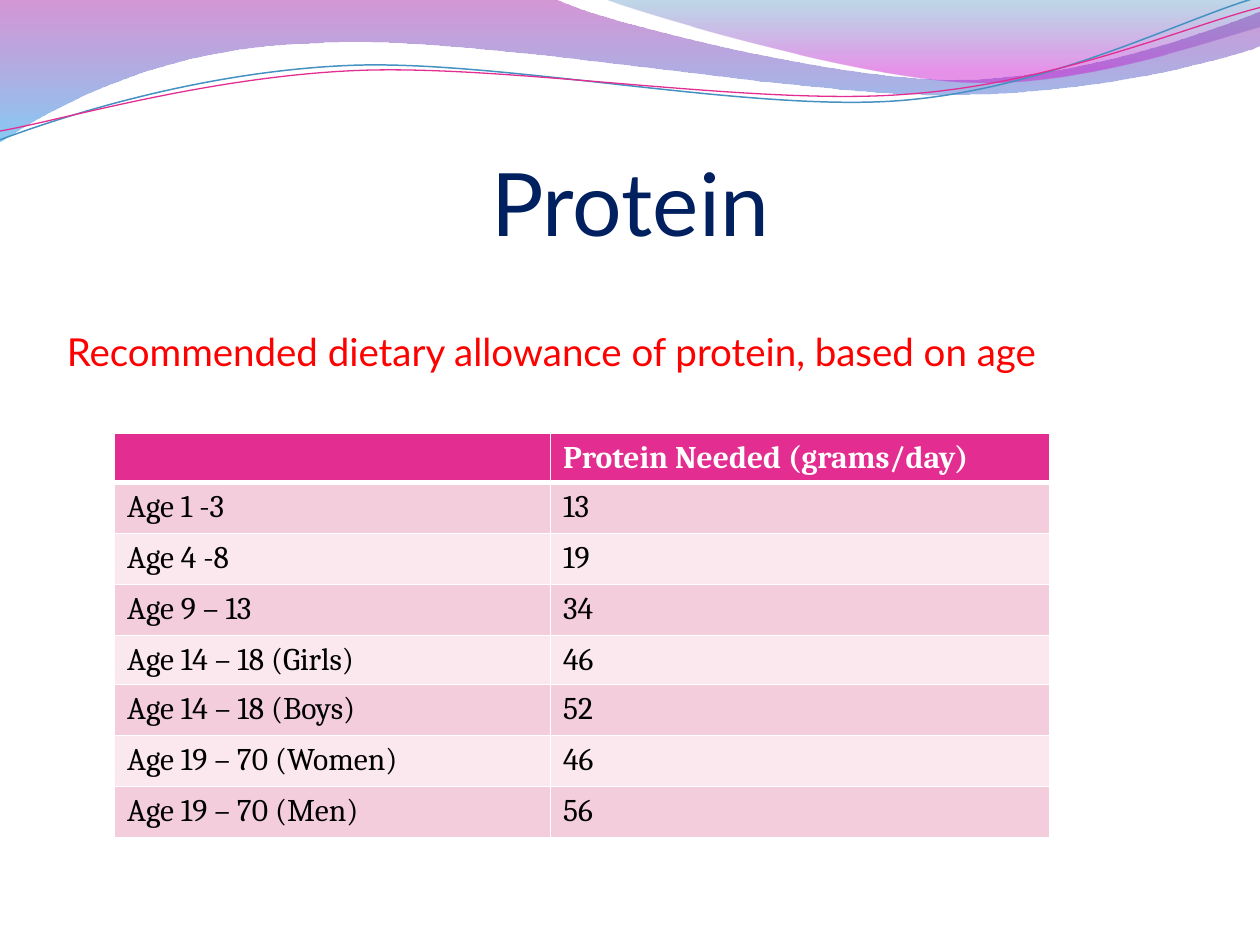
from dataclasses import dataclass

from lxml.etree import SubElement
from pptx import Presentation
from pptx.dml.color import RGBColor
from pptx.enum.text import MSO_ANCHOR, PP_ALIGN
from pptx.oxml.ns import qn
from pptx.util import Inches, Pt

Point = tuple[float, float]


@dataclass(frozen=True)
class Theme:
    navy: str = "002060"
    red: str = "FF0000"
    pink: str = "E32D91"
    blue: str = "4592C2"
    white: str = "FFFFFF"
    black: str = "000000"
    bands: tuple[str, str] = ("F4CDDC", "FAE8EE")
    sans: str = "Lato"
    serif: str = "Cambria"
    title: int = 50
    lead: int = 22
    cell: int = 18


@dataclass(frozen=True)
class Stop:
    place: float
    color: str
    alpha: int


@dataclass(frozen=True)
class Wave:
    """A start point and steps: one point is a line, three are a Bezier curve."""
    start: Point
    steps: list[list[Point]]
    stops: tuple[Stop, ...] = ()
    color: str = ""
    width: float = 0


THEME = Theme()

WAVES = [
    Wave((0, 0), [
        [(4.4, -0.01)],
        [(4.76, 0.17), (6.64, 0.63), (7.58, 0.63)],
        [(8.53, 0.63), (9.58, 0.26), (10, 0.09)],
        [(10.01, 0.36)],
        [(9.83, 0.44), (8.7, 0.76), (7.46, 0.75)],
        [(6.22, 0.75), (3.82, 0.28), (2.57, 0.34)],
        [(1.29, 0.36), (0.46, 0.83), (-0.01, 1.13)],
        [(0, 0)],
    ], stops=(Stop(0, "9F18A2", 45), Stop(1, "239FEB", 55))),
    Wave((4.79, -0.01), [
        [(5.09, 0.11), (6.82, 0.62), (7.69, 0.65)],
        [(8.56, 0.69), (9.61, 0.32), (10, 0.21)],
        [(10, 0)],
        [(4.79, -0.01)],
    ], stops=(Stop(0, "2A7FB3", 30), Stop(0.8, "CB0FD0", 45))),
    Wave((0, 1.11), [
        [(0.48, 0.93), (1.58, 0.57), (2.77, 0.52)],
        [(3.95, 0.47), (5.93, 0.89), (7.13, 0.8)],
        [(8.33, 0.71), (9.38, 0.15), (9.98, -0.02)],
    ], color=THEME.blue, width=0.85),
    Wave((0, 1.04), [
        [(0.47, 0.96), (1.64, 0.61), (2.83, 0.56)],
        [(4.03, 0.51), (5.97, 0.84), (7.17, 0.75)],
        [(8.36, 0.67), (9.41, 0.21), (10, 0.06)],
    ], color=THEME.pink, width=0.75),
]

ROWS = [
    ("", "Protein Needed (grams/day)"),
    ("Age 1 -3", "13"),
    ("Age 4 -8", "19"),
    ("Age 9 – 13", "34"),
    ("Age 14 – 18 (Girls)", "46"),
    ("Age 14 – 18 (Boys)", "52"),
    ("Age 19 – 70 (Women)", "46"),
    ("Age 19 – 70 (Men)", "56"),
]
WIDTHS = (3.46, 3.96)
LOW, TALL = 0.38, 2.43 / 6
HEIGHTS = (LOW, TALL, TALL, TALL, LOW, TALL, TALL, TALL)


def write(frame, text: str, *, size: int, font: str, color: str,
          bold: bool = False, align=PP_ALIGN.LEFT, before: float = 0):
    para = frame.paragraphs[0]
    para.alignment = align
    para.space_before = Pt(before)
    if not text:
        end = SubElement(para._p, qn("a:endParaRPr"), sz=str(size * 100))
        SubElement(end, qn("a:latin"), typeface=font)
        return para
    run = para.add_run()
    run.text = text
    run.font.size = Pt(size)
    run.font.name = font
    run.font.bold = bold
    run.font.color.rgb = RGBColor.from_string(color)
    return para


def place(shape, left: float, top: float, width: float, height: float) -> None:
    shape.left, shape.top = Inches(left), Inches(top)
    shape.width, shape.height = Inches(width), Inches(height)


def bend(shape, steps: list[list[Point]]) -> None:
    """Join the line segments of each three-point step into one Bezier curve."""
    lines = iter(shape.element.xpath(".//a:lnTo"))
    for step in steps:
        group = [next(lines) for _ in step]
        if len(group) == 3:
            head, *others = group
            for line in others:
                head.append(line[0])
                line.getparent().remove(line)
            head.tag = qn("a:cubicBezTo")


def draw_wave(slide, wave: Wave) -> None:
    pen = slide.shapes.build_freeform(*map(Inches, wave.start))
    points = [(Inches(x), Inches(y)) for step in wave.steps for x, y in step]
    pen.add_line_segments(points, close=bool(wave.stops))
    shape = pen.convert_to_shape()
    bend(shape, wave.steps)
    shape.shadow.inherit = False
    if not wave.stops:
        shape.fill.background()
        shape.line.color.rgb = RGBColor.from_string(wave.color)
        shape.line.width = Pt(wave.width)
        return
    shape.line.fill.background()
    shape.fill.gradient()
    shape.fill.gradient_angle = 270
    for mark, stop in zip(shape.fill.gradient_stops, wave.stops):
        mark.position = stop.place
        mark.color.rgb = RGBColor.from_string(stop.color)
    for node, stop in zip(shape.element.xpath(".//a:gs/a:srgbClr"), wave.stops):
        SubElement(node, qn("a:alpha"), val=str(stop.alpha * 1000))


def edge(cell, side: str, width: float) -> None:
    line = SubElement(cell._tc.get_or_add_tcPr(), qn(f"a:ln{side}"), w=str(Pt(width)))
    fill = SubElement(line, qn("a:solidFill"))
    SubElement(fill, qn("a:srgbClr"), val=THEME.white)


def draw_table(slide, left: float, top: float) -> None:
    table = slide.shapes.add_table(
        len(ROWS), len(WIDTHS), Inches(left), Inches(top),
        Inches(sum(WIDTHS)), Inches(sum(HEIGHTS))).table
    for column, width in zip(table.columns, WIDTHS):
        column.width = Inches(width)
    for r, (row, height) in enumerate(zip(ROWS, HEIGHTS)):
        table.rows[r].height = Inches(height)
        head = r == 0
        for c, text in enumerate(row):
            cell = table.cell(r, c)
            for side in "LRTB":
                thick = (head and side == "B") or (r == 1 and side == "T")
                edge(cell, side, 3 if thick else 1)
            cell.fill.solid()
            cell.fill.fore_color.rgb = RGBColor.from_string(
                THEME.pink if head else THEME.bands[(r - 1) % 2])
            write(cell.text_frame, text, size=THEME.cell, font=THEME.serif,
                  color=THEME.white if head else THEME.black, bold=head)


def main() -> None:
    deck = Presentation()
    deck.slide_width, deck.slide_height = Inches(10), Inches(7.5)
    slide = deck.slides.add_slide(deck.slide_layouts[1])
    for wave in WAVES:
        draw_wave(slide, wave)

    title, body = slide.placeholders
    place(title, 0.5, 0.77, 9, 1.25)
    frame = title.text_frame
    frame.vertical_anchor = MSO_ANCHOR.BOTTOM
    frame.margin_left = frame.margin_right = frame.margin_bottom = 0
    frame.margin_top = Inches(0.05)
    write(frame, "Protein", size=THEME.title, font=THEME.sans,
          color=THEME.navy, align=PP_ALIGN.CENTER)

    place(body, 0.43, 2.55, 9, 4.95)
    para = write(body.text_frame, "Recommended dietary allowance of protein, based on age",
                 size=THEME.lead, font=THEME.sans, color=THEME.red,
                 before=0.2 * THEME.lead)
    props = para._p.get_or_add_pPr()
    props.set("marL", str(Inches(0.3)))
    props.set("indent", str(Inches(-0.3)))
    SubElement(props, qn("a:buNone"))

    draw_table(slide, 0.91, 3.44)
    deck.save("out.pptx")


if __name__ == "__main__":
    main()
